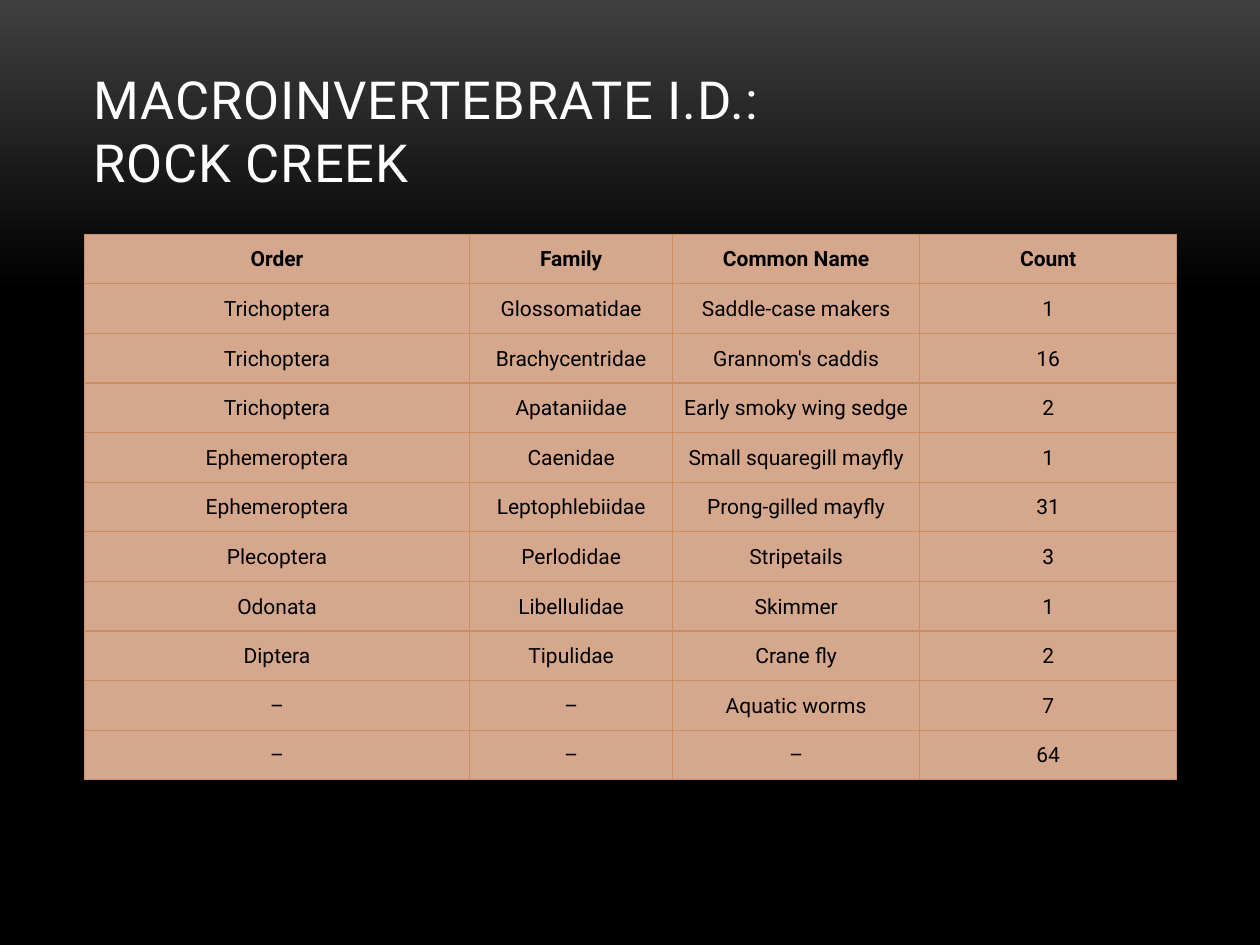
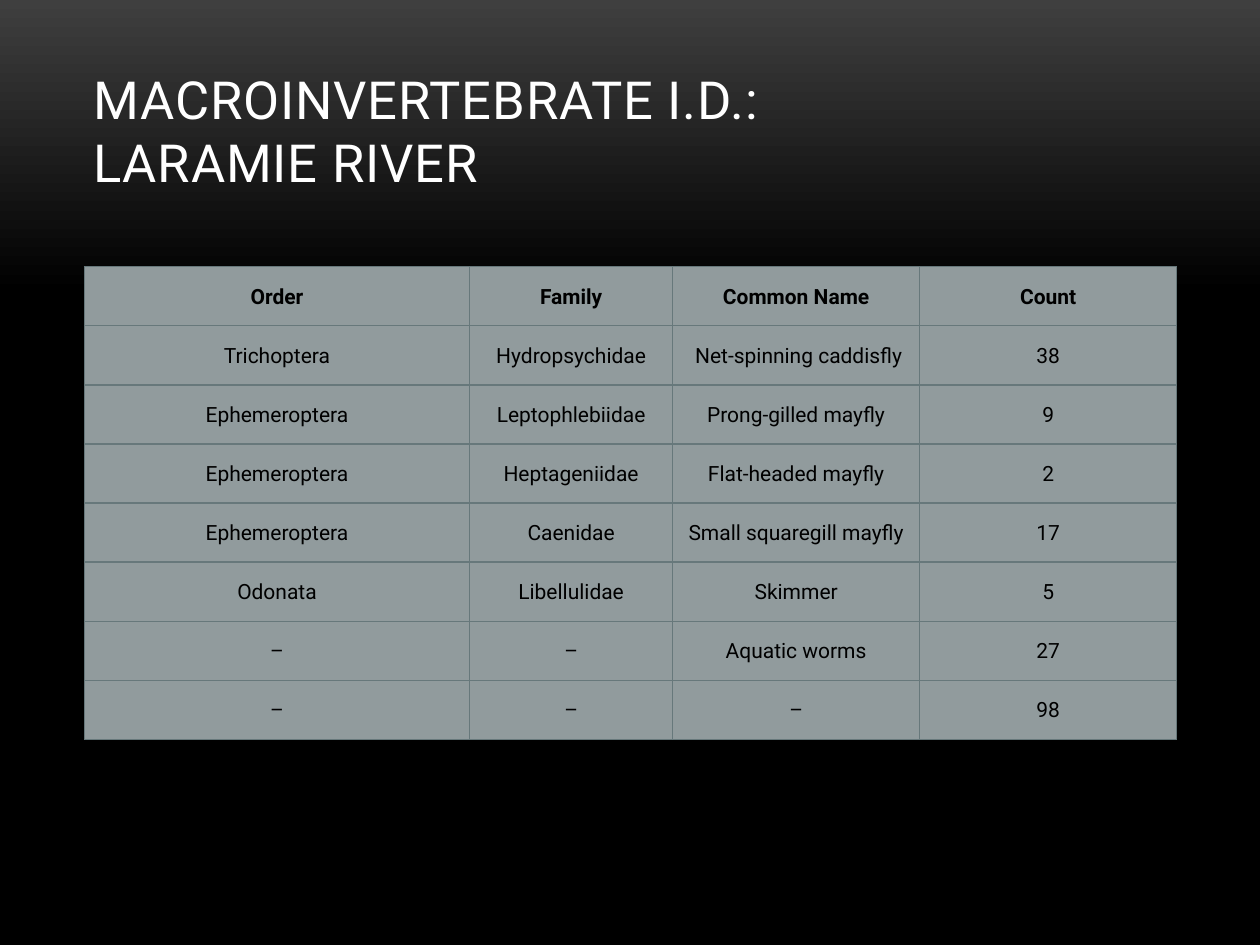
"""Build the macroinvertebrate identification tables for two streams."""
from copy import deepcopy
from dataclasses import dataclass

from lxml import etree
from pptx import Presentation
from pptx import util as u
from pptx.dml.color import RGBColor
from pptx.enum import text
from pptx.oxml import ns

FONT = "Roboto"
WHITE = RGBColor(0xFF, 0xFF, 0xFF)
BLACK = RGBColor(0x00, 0x00, 0x00)
CHARCOAL = RGBColor(0x3F, 0x3F, 0x3F)
CLAY = RGBColor(0xD5, 0xA8, 0x8D)
CLAY_LINE = RGBColor(0xCC, 0x8E, 0x60)
SLATE = RGBColor(0x91, 0x9B, 0x9D)
SLATE_LINE = RGBColor(0x67, 0x78, 0x7B)

LEFT = u.Cm(1.7)
WIDTH = u.Cm(22.02)
COLUMN_WIDTHS = [u.Cm(width) for width in (7.77, 4.09, 4.98, 5.18)]
HEADINGS = ("Order", "Family", "Common Name", "Count")


@dataclass(frozen=True)
class Survey:
    """One stream's table of counts and its look."""

    stream: str
    top: u.Length
    row_height: u.Length
    fill: RGBColor
    line: RGBColor
    counts: list[tuple[str, str, str, str]]


SURVEYS = [
    Survey("ROCK CREEK", u.Cm(4.72), u.Cm(1), CLAY, CLAY_LINE, [
        ("Trichoptera", "Glossomatidae", "Saddle-case makers", "1"),
        ("Trichoptera", "Brachycentridae", "Grannom's caddis", "16"),
        ("Trichoptera", "Apataniidae", "Early smoky wing sedge", "2"),
        ("Ephemeroptera", "Caenidae", "Small squaregill mayfly", "1"),
        ("Ephemeroptera", "Leptophlebiidae", "Prong-gilled mayfly", "31"),
        ("Plecoptera", "Perlodidae", "Stripetails", "3"),
        ("Odonata", "Libellulidae", "Skimmer", "1"),
        ("Diptera", "Tipulidae", "Crane fly", "2"),
        ("–", "–", "Aquatic worms", "7"),
        ("–", "–", "–", "64"),
    ]),
    Survey("LARAMIE RIVER", u.Cm(5.38), u.Cm(1.19), SLATE, SLATE_LINE, [
        ("Trichoptera", "Hydropsychidae", " Net-spinning caddisfly", "38"),
        ("Ephemeroptera", "Leptophlebiidae", "Prong-gilled mayfly", "9"),
        ("Ephemeroptera", "Heptageniidae", "Flat-headed mayfly", "2"),
        ("Ephemeroptera", "Caenidae", "Small squaregill mayfly", "17"),
        ("Odonata", "Libellulidae", "Skimmer", "5"),
        ("–", "–", "Aquatic worms", "27"),
        ("–", "–", "–", "98"),
    ]),
]


def paint_background(master) -> None:
    """Fade every slide from charcoal at the top to black."""
    fill = master.background.fill
    fill.gradient()
    fill.gradient_angle = 270
    charcoal, black = fill.gradient_stops
    charcoal.color.rgb = CHARCOAL
    black.color.rgb = BLACK
    stops = master.element.find(".//" + ns.qn("p:bgPr") + "//" + ns.qn("a:gsLst"))
    fade_end = deepcopy(stops[-1])
    fade_end.set("pos", "31000")
    stops.insert(1, fade_end)


def add_run(paragraph, words: str, size: int, color: RGBColor, bold: bool = False):
    """Add one styled run and return it."""
    run = paragraph.add_run()
    run.text = words
    run.font.name = FONT
    run.font.size = u.Pt(size)
    run.font.bold = bold
    run.font.color.rgb = color
    return run


def add_title(slide, stream: str) -> None:
    """Write the two-line heading, ending with the stream's name."""
    frame = slide.shapes.add_textbox(LEFT, u.Cm(0.76), WIDTH, u.Cm(3.18)).text_frame
    frame.word_wrap = True
    frame.vertical_anchor = text.MSO_ANCHOR.BOTTOM
    frame.margin_left = u.Cm(0.18)
    frame.margin_bottom = u.Cm(0.05)
    heading = frame.paragraphs[0]
    heading.line_spacing = u.Pt(36)
    first = add_run(heading, "MACROINVERTEBRATE I.D.:", 30, WHITE)
    heading.add_line_break()
    second = add_run(heading, stream, 30, WHITE)
    for run in (first, second):
        run.font._element.set("spc", "50")


def outline_cell(cell, color: RGBColor) -> None:
    """Draw a thin line on all four sides of a cell."""
    properties = cell._tc.get_or_add_tcPr()
    for side in ("a:lnL", "a:lnR", "a:lnT", "a:lnB"):
        line = etree.SubElement(properties, ns.qn(side), w=str(u.Pt(0.75)))
        solid = etree.SubElement(line, ns.qn("a:solidFill"))
        etree.SubElement(solid, ns.qn("a:srgbClr"), val=str(color))


def fill_cell(cell, words: str, survey: Survey, bold: bool) -> None:
    """Style a cell and centre its words."""
    outline_cell(cell, survey.line)
    cell.fill.solid()
    cell.fill.fore_color.rgb = survey.fill
    cell.margin_left = cell.margin_right = cell.margin_top = u.Cm(0.03)
    cell.margin_bottom = u.Cm(0)
    cell.vertical_anchor = text.MSO_ANCHOR.MIDDLE
    paragraph = cell.text_frame.paragraphs[0]
    paragraph.alignment = text.PP_ALIGN.CENTER
    add_run(paragraph, words, 12, BLACK, bold)


def add_counts(slide, survey: Survey) -> None:
    """Add the table of orders, families, names and counts."""
    rows = [HEADINGS, *survey.counts]
    table = slide.shapes.add_table(
        len(rows), len(HEADINGS), LEFT, survey.top, WIDTH, survey.row_height * len(rows)
    ).table
    table.first_row = table.horz_banding = False
    for column, width in zip(table.columns, COLUMN_WIDTHS):
        column.width = width
    for row_index, (row, entries) in enumerate(zip(table.rows, rows)):
        row.height = survey.row_height
        for cell, words in zip(row.cells, entries):
            fill_cell(cell, words, survey, bold=row_index == 0)


def main() -> None:
    """Build and save the presentation."""
    deck = Presentation()
    deck.slide_width = u.Cm(25.4)
    deck.slide_height = u.Cm(19.05)
    paint_background(deck.slide_master)
    for survey in SURVEYS:
        slide = deck.slides.add_slide(deck.slide_layouts[6])
        add_title(slide, survey.stream)
        add_counts(slide, survey)
    deck.save("out.pptx")


if __name__ == "__main__":
    main()
